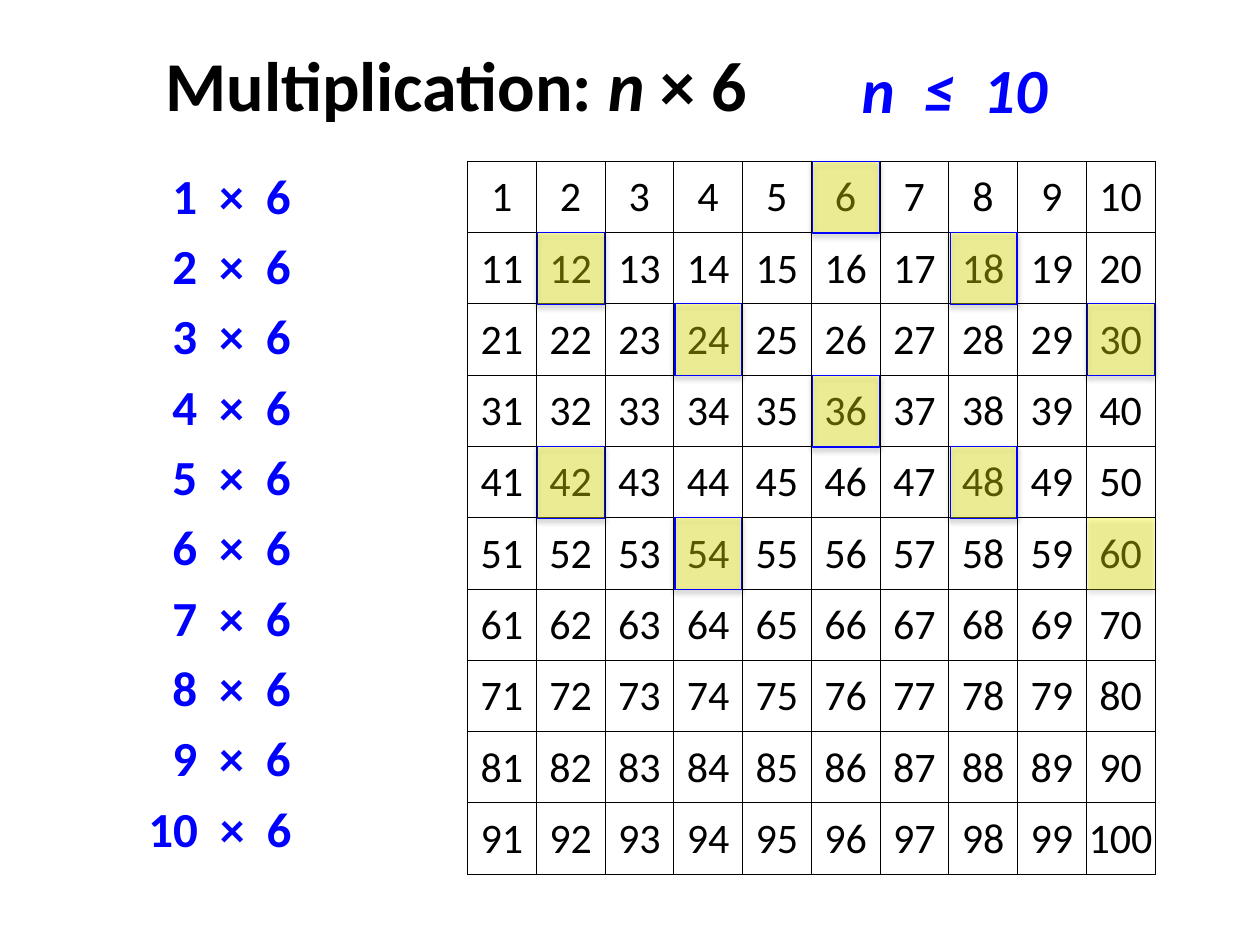
"""Build a slide showing the first ten multiples of six on a hundred grid."""
from lxml import etree
from pptx import Presentation
from pptx.dml.color import RGBColor
from pptx.enum.shapes import MSO_SHAPE
from pptx.enum.text import MSO_ANCHOR, PP_ALIGN
from pptx.oxml.ns import qn
from pptx.util import Inches, Pt

BLACK = RGBColor(0x00, 0x00, 0x00)
BLUE = RGBColor(0x00, 0x00, 0xFF)
YELLOW = RGBColor(0xFF, 0xFF, 0x00)
RECT = MSO_SHAPE.RECTANGLE
CENTER = PP_ALIGN.CENTER
MIDDLE = MSO_ANCHOR.MIDDLE
FONT = "Calibri"
SIZE = 10
FACTOR = 6
LEFT, TOP = 3.71, 1.28
WIDE, HIGH = 0.546, 0.566


def style(font, size, color, bold=False, italic=False):
    font.name = FONT
    font.size = Pt(size)
    font.color.rgb = color
    font.bold = bold
    font.italic = italic


def add_box(slide, left, top, width, height):
    box = slide.shapes.add_textbox(
        Inches(left), Inches(top), Inches(width), Inches(height))
    box.text_frame.word_wrap = True
    return box.text_frame


def add_title(slide):
    frame = add_box(slide, 0.79, 0.25, 5.66, 0.82)
    frame.vertical_anchor = MIDDLE
    para = frame.paragraphs[0]
    para.alignment = CENTER
    for text in ("Multiplication: ", "n", f" × {FACTOR}"):
        run = para.add_run()
        run.text = text
        style(run.font, 40, BLACK, bold=True, italic=text == "n")


def add_label(slide, text, left, top, size, italic=False):
    frame = add_box(slide, left, top, 2.14, 0.9)
    frame.text = text
    para = frame.paragraphs[0]
    para.line_spacing = 1.2
    para.space_after = Pt(6)
    style(para.runs[0].font, size, BLUE, bold=True, italic=italic)


def add_edges(cell):
    props = cell._tc.get_or_add_tcPr()
    for tag in ("a:lnL", "a:lnR", "a:lnT", "a:lnB"):
        line = etree.SubElement(props, qn(tag), w=str(Pt(0.5)))
        fill = etree.SubElement(line, qn("a:solidFill"))
        etree.SubElement(fill, qn("a:srgbClr"), val=str(BLACK))


def fill_cell(cell, text):
    add_edges(cell)
    cell.fill.background()
    cell.vertical_anchor = MIDDLE
    cell.margin_left = cell.margin_right = cell.margin_top = Inches(0.01)
    cell.margin_bottom = 0
    cell.text_frame.text = text
    para = cell.text_frame.paragraphs[0]
    para.alignment = CENTER
    style(para.runs[0].font, 24, BLACK)


def add_grid(slide):
    table = slide.shapes.add_table(
        SIZE, SIZE, Inches(LEFT), Inches(TOP),
        Inches(SIZE * WIDE), Inches(SIZE * HIGH)).table
    table.first_row = table.horz_banding = False
    for index, cell in enumerate(table.iter_cells(), 1):
        fill_cell(cell, str(index))


def add_alpha(color, percent):
    etree.SubElement(color, qn("a:alpha"), val=str(percent * 1000))


def add_shadow(shape):
    shape.shadow.inherit = False
    effects = shape._element.spPr.find(qn("a:effectLst"))
    shadow = etree.SubElement(
        effects, qn("a:outerShdw"), blurRad=str(Pt(3.1)), dist=str(Pt(1.8)),
        dir="5400000", rotWithShape="0")
    color = etree.SubElement(shadow, qn("a:srgbClr"), val=str(BLACK))
    add_alpha(color, 35)


def add_mark(slide, number, lined):
    row, col = divmod(number - 1, SIZE)
    mark = slide.shapes.add_shape(
        RECT, Inches(LEFT + 0.01 + col * WIDE), Inches(TOP + row * HIGH),
        Inches(0.53), Inches(0.57))
    mark.fill.solid()
    mark.fill.fore_color.rgb = YELLOW
    add_alpha(mark._element.spPr.find(qn("a:solidFill"))[0], 34)
    if lined:
        mark.line.color.rgb = BLUE
        mark.line.width = Pt(0.75)
    else:
        mark.line.fill.background()
    add_shadow(mark)


def main():
    deck = Presentation()
    deck.slide_width, deck.slide_height = Inches(10), Inches(7.5)
    slide = deck.slides.add_slide(deck.slide_layouts[6])
    add_title(slide)
    add_label(slide, f"n  ≤  {SIZE}", 6.74, 0.23, 36, italic=True)
    add_grid(slide)
    for count in range(1, SIZE + 1):
        add_mark(slide, count * FACTOR, lined=count < SIZE)
    for count in range(1, SIZE + 1):
        left = 1.27 if count < 10 else 1.08
        top = 1.17 + (count - 1) * 0.558
        add_label(slide, f"{count}  ×  {FACTOR}", left, top, 28)
    deck.save("out.pptx")


if __name__ == "__main__":
    main()
